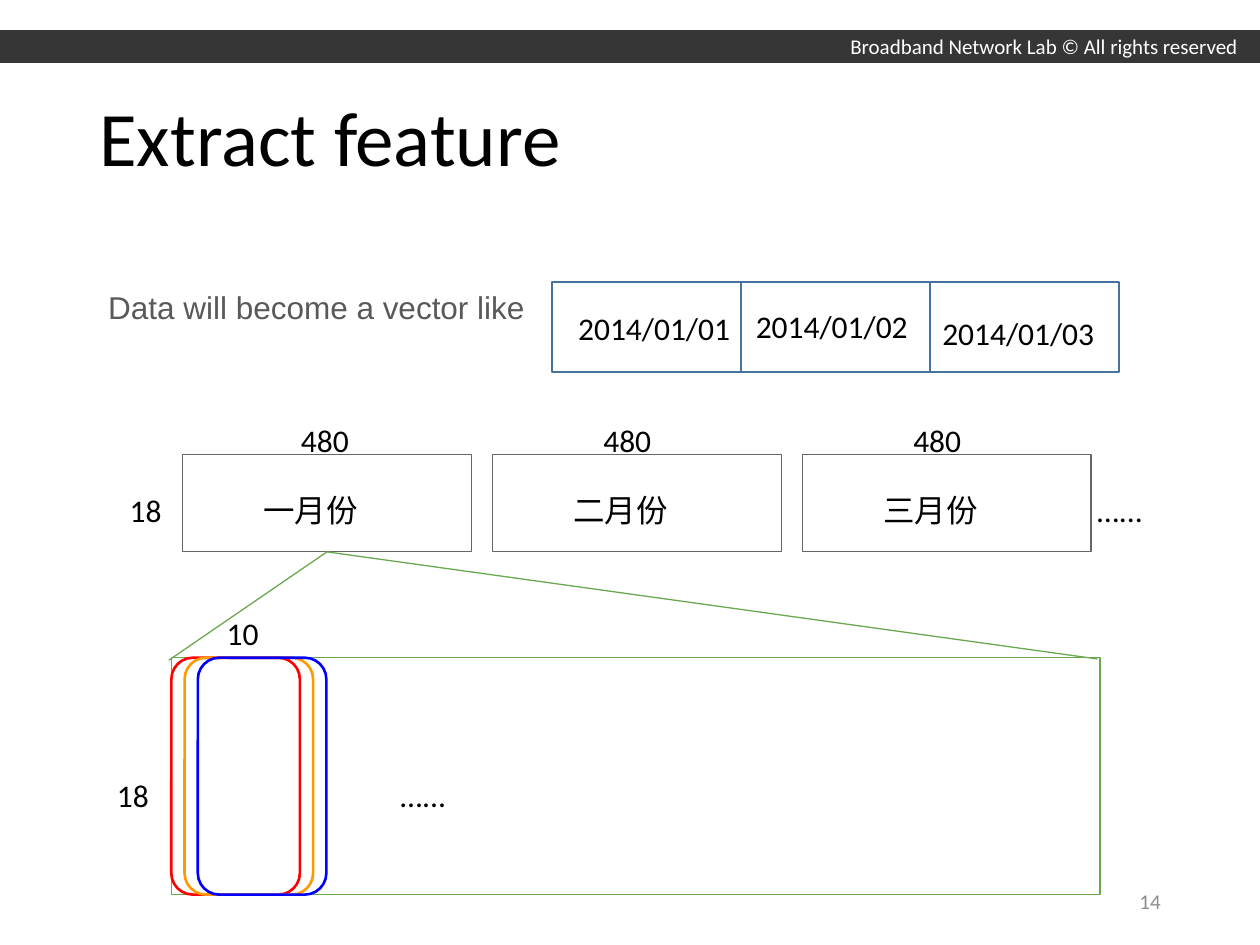
from lxml import etree
from pptx import Presentation
from pptx.dml.color import RGBColor
from pptx.enum.shapes import MSO_CONNECTOR, MSO_SHAPE
from pptx.enum.text import MSO_ANCHOR, PP_ALIGN
from pptx.oxml.ns import qn
from pptx.util import Inches, Pt

RECT, ROUND = MSO_SHAPE.RECTANGLE, MSO_SHAPE.ROUNDED_RECTANGLE
STRAIGHT = MSO_CONNECTOR.STRAIGHT
MIDDLE, RIGHT = MSO_ANCHOR.MIDDLE, PP_ALIGN.RIGHT

BLACK, WHITE = RGBColor(0, 0, 0), RGBColor(255, 255, 255)
BAR, BODY, MUTED = (RGBColor(0x36, 0x36, 0x36), RGBColor(0x59, 0x59, 0x59),
                    RGBColor(0x8C, 0x8C, 0x8C))
BLUE_LINE, GRAY_LINE, GREEN = (RGBColor(0x43, 0x73, 0x9E), RGBColor(0x66, 0x66, 0x66),
                               RGBColor(0x6A, 0xA8, 0x4F))
RED, ORANGE, BLUE = RGBColor(255, 0, 0), RGBColor(255, 0x99, 0), RGBColor(0, 0, 255)

# Content
HEADER = "Broadband Network Lab © All rights reserved"
TITLE = "Extract feature"
LEAD = "Data will become a vector like"
DAYS = [("2014/01/01", 4.49, 2.4), ("2014/01/02", 5.9, 2.39), ("2014/01/03", 7.38, 2.44)]
MONTHS = [("一月份", "480", 2.29), ("二月份", "480", 4.69), ("三月份", "480", 7.15)]
LABELS = [("18", 0.93, 3.8, 0.52), ("…...", 8.61, 3.8, 0.82),
          ("18", 0.83, 6.06, 0.52), ("…...", 3.08, 6.06, 0.82), ("10", 1.7, 4.77, 0.52)]
WINDOWS = [RED, ORANGE, BLUE]

# Layout in inches
DAY_X, DAY_Y, DAY_W, DAY_H = 4.38, 2.24, 1.5, 0.71
MONTH_X, MONTH_Y, MONTH_W, MONTH_H, MONTH_STEP = 1.45, 3.61, 2.29, 0.77, 2.46
ZOOM_X, ZOOM_Y, ZOOM_W, ZOOM_H = 1.36, 5.22, 7.37, 1.88
WINDOW_W, WINDOW_STEP = 1.02, 0.105

prs = Presentation()
prs.slide_width, prs.slide_height = Inches(10), Inches(7.5)
slide = prs.slides.add_slide(prs.slide_layouts[6])


def add_text(text, x, y, w, h, inset=0.05, wrap=True, anchor=MSO_ANCHOR.TOP,
             align=PP_ALIGN.LEFT, spacing=None, **font):
    sp = slide.shapes.add_textbox(*map(Inches, (x, y, w, h)))
    tf = sp.text_frame
    tf.word_wrap, tf.vertical_anchor = wrap, anchor
    tf.margin_top = tf.margin_bottom = Inches(inset)
    p = tf.paragraphs[0]
    p.alignment, p.line_spacing = align, spacing
    r = p.add_run()
    r.text = text
    style = {"name": "Calibri", "size": 18, "color": BLACK, **font}
    r.font.name, r.font.size = style["name"], Pt(style["size"])
    r.font.color.rgb = style["color"]


def add_box(kind, x, y, w, h, line=None, width=0.75, fill=None):
    sp = slide.shapes.add_shape(kind, *map(Inches, (x, y, w, h)))
    sp.shadow.inherit = False
    if fill is None:
        sp.fill.background()
    else:
        sp.fill.solid()
        sp.fill.fore_color.rgb = fill
    if line is None:
        sp.line.fill.background()
    else:
        sp.line.color.rgb, sp.line.width = line, Pt(width)
    return sp


# Header, title and page number
add_box(RECT, 0, 0.24, 10, 0.26, fill=BAR)
add_text(HEADER, 6.65, 0.22, 3.31, 0.3, wrap=False, size=12, color=WHITE)
add_text(TITLE, 0.69, 0.4, 8.62, 1.45, anchor=MIDDLE, spacing=0.9, size=44)
add_text("14", 7.06, 6.95, 2.25, 0.4, anchor=MIDDLE, align=RIGHT, size=12, color=MUTED)

# Day vector
add_text(LEAD, 0.76, 2.24, 3.54, 0.4, wrap=False, name="Arial", color=BODY)
for i in range(len(DAYS)):
    add_box(RECT, DAY_X + i * DAY_W, DAY_Y, DAY_W, DAY_H, BLUE_LINE, 1)
for day, x, y in DAYS:
    add_text(day, x, y, 1.42, 0.4, wrap=False)

# Month blocks
months = []
for i, (month, hours, hours_x) in enumerate(MONTHS):
    x = MONTH_X + i * MONTH_STEP
    months.append(add_box(RECT, x, MONTH_Y, MONTH_W, MONTH_H, GRAY_LINE))
    add_text(month, x + 0.54, 3.8, 1.21, 0.39, inset=0.1)
    add_text(hours, hours_x, 3.24, 0.73, 0.39, inset=0.1)

# First month enlarged
add_box(RECT, ZOOM_X, ZOOM_Y, ZOOM_W, ZOOM_H, GREEN)
for x, y in [(1.34, 5.24), (8.71, 5.23)]:
    line = slide.shapes.add_connector(STRAIGHT, 0, 0, Inches(x), Inches(y))
    line.begin_connect(months[0], 2)
    line.line.color.rgb, line.line.width = GREEN, Pt(0.75)
    etree.SubElement(line._element.spPr, qn("a:effectLst"))

# Sliding windows
for i, color in enumerate(WINDOWS):
    sp = add_box(ROUND, ZOOM_X + i * WINDOW_STEP, ZOOM_Y, WINDOW_W, ZOOM_H, color, 1.5)
    sp.adjustments[0] = 0.167

# Dimensions and ellipses
for text, x, y, w in LABELS:
    add_text(text, x, y, w, 0.39, inset=0.1)

prs.save("out.pptx")
